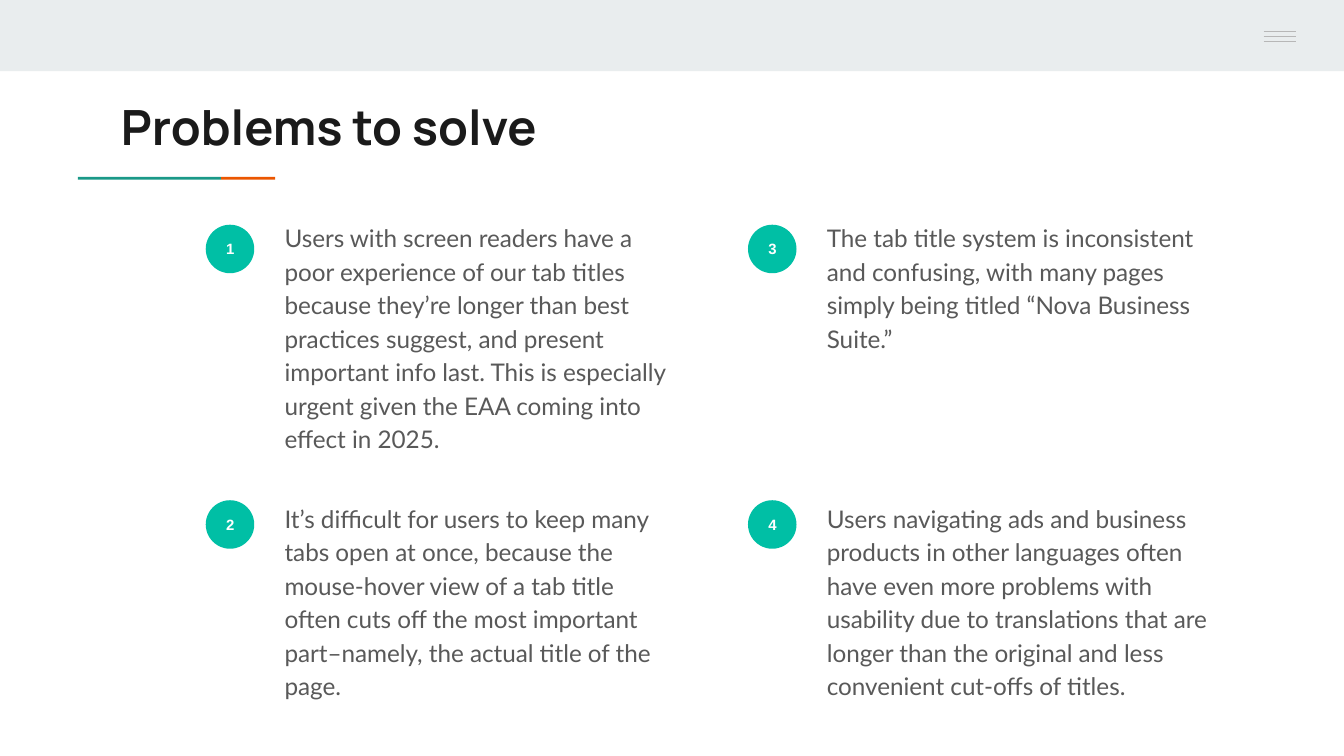
from pptx import Presentation
from pptx.dml.color import RGBColor
from pptx.enum.shapes import MSO_CONNECTOR, MSO_SHAPE
from pptx.enum.text import MSO_ANCHOR as Anchor, MSO_AUTO_SIZE as AutoSize, PP_ALIGN as Align
from pptx.util import Pt
from lxml import etree

BAND = RGBColor(0xE9, 0xED, 0xEE)
MENU = RGBColor(0xB7, 0xB7, 0xB7)
GREEN = RGBColor(0x1A, 0x99, 0x88)
ORANGE = RGBColor(0xEB, 0x56, 0x00)
TEAL = RGBColor(0x00, 0xBF, 0xA5)
DARK = RGBColor(0x1A, 0x1A, 0x1A)
GREY = RGBColor(0x59, 0x59, 0x59)
WHITE = RGBColor(0xFF, 0xFF, 0xFF)

DRAWING = "http://schemas.openxmlformats.org/drawingml/2006/main"
INSET = 7.2
PROBLEMS = [
    "Users with screen readers have a poor experience of our tab titles because "
    "they’re longer than best practices suggest, and present important info last. "
    "This is especially urgent given the EAA coming into effect in 2025.",
    "It’s difficult for users to keep many tabs open at once, because the mouse-hover "
    "view of a tab title often cuts off the most important part–namely, the actual "
    "title of the page.",
    "The tab title system is inconsistent and confusing, with many pages simply being "
    "titled “Nova Business Suite.”",
    "Users navigating ads and business products in other languages often have even more "
    "problems with usability due to translations that are longer than the original and "
    "less convenient cut-offs of titles.",
]


class SlideBuilder:
    def __init__(self, slide):
        self.slide = slide

    def set_text(self, shape, text, font, size, color, bold=False,
                 align=Align.LEFT, anchor=Anchor.TOP):
        frame = shape.text_frame
        frame.word_wrap = True
        frame.auto_size = AutoSize.NONE
        frame.vertical_anchor = anchor
        frame.margin_left = frame.margin_right = Pt(INSET)
        frame.margin_top = frame.margin_bottom = Pt(INSET)
        frame.text = text
        paragraph = frame.paragraphs[0]
        paragraph.alignment = align
        paragraph.font.name = font
        paragraph.font.size = Pt(size)
        paragraph.font.bold = bold
        paragraph.font.color.rgb = color
        return paragraph

    def title(self, text, left, top, width, height):
        title = self.slide.shapes.title
        title.left, title.top = Pt(left), Pt(top)
        title.width, title.height = Pt(width), Pt(height)
        self.set_text(title, text, "Manrope", 26, DARK, bold=True)

    def block(self, kind, left, top, width, height, color):
        shape = self.slide.shapes.add_shape(
            kind, Pt(left), Pt(top), Pt(width), Pt(height))
        shape.shadow.inherit = False
        shape.fill.solid()
        shape.fill.fore_color.rgb = color
        shape.line.fill.background()
        return shape

    def rule(self, left, right, y, color):
        line = self.slide.shapes.add_connector(
            MSO_CONNECTOR.STRAIGHT, Pt(left), Pt(y), Pt(right), Pt(y))
        line.line.color.rgb = color
        line.line.width = Pt(0.75)
        etree.SubElement(line._element.spPr, f"{{{DRAWING}}}effectLst")

    def badge(self, number, left, top):
        shape = self.block(MSO_SHAPE.OVAL, left, top, 26, 26, TEAL)
        self.set_text(shape, str(number), "Arial", 8, WHITE, bold=True,
                      align=Align.CENTER, anchor=Anchor.MIDDLE)

    def body(self, text, left, top):
        box = self.slide.shapes.add_textbox(Pt(left), Pt(top), Pt(223.2), Pt(82.8))
        paragraph = self.set_text(box, text, "Lato", 13, GREY)
        paragraph.line_spacing = 1.15
        paragraph.space_after = Pt(16)


def main():
    presentation = Presentation()
    presentation.slide_width, presentation.slide_height = Pt(720), Pt(405)
    slide = presentation.slides.add_slide(presentation.slide_layouts[5])
    builder = SlideBuilder(slide)

    # Header band with menu icon
    builder.block(MSO_SHAPE.RECTANGLE, 0, 0, 720, 38.2, BAND)
    for row in range(3):
        builder.rule(677, 694.2, 17 + 2.6 * row, MENU)

    # Title and its two-colour underline
    builder.title("Problems to solve", 57.6, 44.6, 605.5, 42.5)
    builder.block(MSO_SHAPE.RECTANGLE, 41.8, 94.8, 76.6, 1.5, GREEN)
    builder.block(MSO_SHAPE.RECTANGLE, 118.4, 94.8, 29, 1.5, ORANGE)

    # Numbered problems, down each column in turn
    badge_tops, body_tops = (120.4, 268), (110.2, 260.6)
    for index, problem in enumerate(PROBLEMS):
        column, row = divmod(index, 2)
        left = 110.2 + 290.5 * column
        builder.badge(index + 1, left, badge_tops[row])
        builder.body(problem, left + 35.2, body_tops[row])

    presentation.save("out.pptx")


if __name__ == "__main__":
    main()
